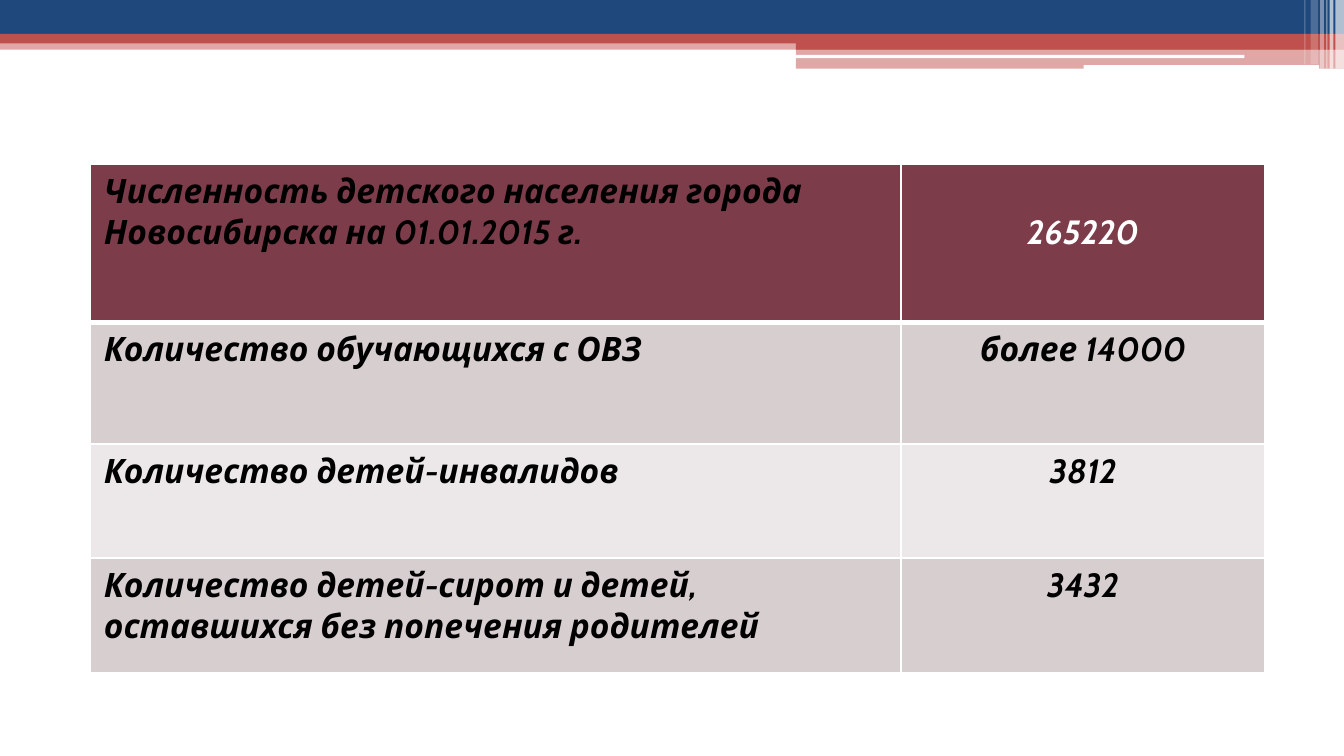
import pptx
import pptx.dml.color
import pptx.enum.shapes
import pptx.enum.text
import pptx.oxml
import pptx.oxml.ns
import pptx.util
import lxml.etree

Cm = pptx.util.Cm
Pt = pptx.util.Pt
Kind = pptx.enum.shapes.MSO_SHAPE
NAVY, RED, WHITE, BLACK = "1F497D", "C0504D", "FFFFFF", "000000"
WINE, DARK, LIGHT = "7D3C4A", "D7CED0", "ECE8E9"

ROWS = [
    ("Численность детского населения города Новосибирска на 01.01.2015 г.", "265220"),
    ("Количество обучающихся с ОВЗ", "более 14000"),
    ("Количество детей-инвалидов", "3812"),
    ("Количество детей-сирот и детей, оставшихся без попечения родителей", "3432"),
]


def color(text):
    return pptx.dml.color.RGBColor.from_string(text)


def add_bar(slide, box, fill, alpha=100, kind=Kind.RECTANGLE):
    """Add a borderless bar; box is in cm, alpha is the opacity in percent."""
    bar = slide.shapes.add_shape(kind, *map(Cm, box))
    bar.shadow.inherit = False
    bar.line.fill.background()
    bar.fill.solid()
    bar.fill.fore_color.rgb = color(fill)
    if alpha < 100:
        tone = bar.fill._xPr.find(".//" + pptx.oxml.ns.qn("a:srgbClr"))
        lxml.etree.SubElement(tone, pptx.oxml.ns.qn("a:alpha"), val=str(alpha * 1000))


def add_header(slide, left, top, width):
    """Draw the banner: full stripes, the stepped right part and its glints."""
    step = 15.04
    rest = width - step
    for x, y, w, h, fill, alpha in [
        (0, 0.76, width, 0.18, RED, 50),
        (0, 0, width, 0.66, NAVY, 100),
        (0, 0.64, width, 0.18, RED, 100),
        (step, 0.76, rest, 0.18, RED, 100),
        (step, 0.92, rest, 0.38, RED, 50),
    ]:
        add_bar(slide, (left + x, top + y, w, h), fill, alpha)
    for x, y, w, h in [(15.01, 1.04, 8.51, 0.06), (20.48, 1.23, 4.45, 0.09)]:
        add_bar(slide, (left + x, top + y, w, h), WHITE, kind=Kind.ROUNDED_RECTANGLE)
    for inset, w, h, alpha in [
        (0.16, 0.16, 1.3, 65),
        (0.27, 0.07, 1.3, 65),
        (0.33, 0.02, 1.3, 60),
        (0.45, 0.07, 1.3, 40),
        (0.63, 0.14, 1.22, 20),
        (0.75, 0.02, 1.22, 30),
    ]:
        add_bar(slide, (left + width - inset, top, w, h), WHITE, alpha)


def set_edges(cell, **widths):
    """Give the cell white borders, in points by side (L, R, T, B)."""
    props = cell._tc.get_or_add_tcPr()
    for spot, side in enumerate("LRTB"):
        props.insert(spot, pptx.oxml.parse_xml(
            f'<a:ln{side} {pptx.oxml.ns.nsdecls("a")} w="{Pt(widths.get(side, 1))}">'
            f'<a:solidFill><a:srgbClr val="{WHITE}"/></a:solidFill></a:ln{side}>'))


def fill_cell(cell, text, fill, ink, align):
    cell.fill.solid()
    cell.fill.fore_color.rgb = color(fill)
    cell.text = text
    line = cell.text_frame.paragraphs[0]
    line.alignment = align
    font = line.font
    font.name, font.size = "Cabin", Pt(18)
    font.bold = font.italic = True
    font.color.rgb = color(ink)


def add_counts(slide, left, top, width):
    heights = [3, 2.29, 2.16, 2.16]
    label = 15.32
    frame = slide.shapes.add_table(
        len(ROWS), 2, Cm(left), Cm(top), Cm(width), Cm(sum(heights)))
    table = frame.table
    table.columns[0].width = Cm(label)
    table.columns[1].width = Cm(width - label)
    aligns = [pptx.enum.text.PP_ALIGN.LEFT, pptx.enum.text.PP_ALIGN.CENTER]
    for r, (row, height) in enumerate(zip(ROWS, heights)):
        table.rows[r].height = Cm(height)
        fill = WINE if r == 0 else DARK if r % 2 else LIGHT
        for c, text in enumerate(row):
            cell = table.cell(r, c)
            ink = WHITE if (r, c) == (0, 1) else BLACK
            fill_cell(cell, text, fill, ink, aligns[c])
            set_edges(cell, T=3 if r == 1 else 1, B=3 if r == 0 else 1)
    # The first count sits level with the second line of its label.
    table.cell(0, 1).margin_top = Cm(0.9)


def main():
    deck = pptx.Presentation()
    deck.slide_width, deck.slide_height = Cm(25.4), Cm(14.29)
    slide = deck.slides.add_slide(deck.slide_layouts[6])
    add_header(slide, 0, 0, 25.4)
    add_counts(slide, 1.71, 3.1, 22.2)
    deck.save("out.pptx")


if __name__ == "__main__":
    main()
